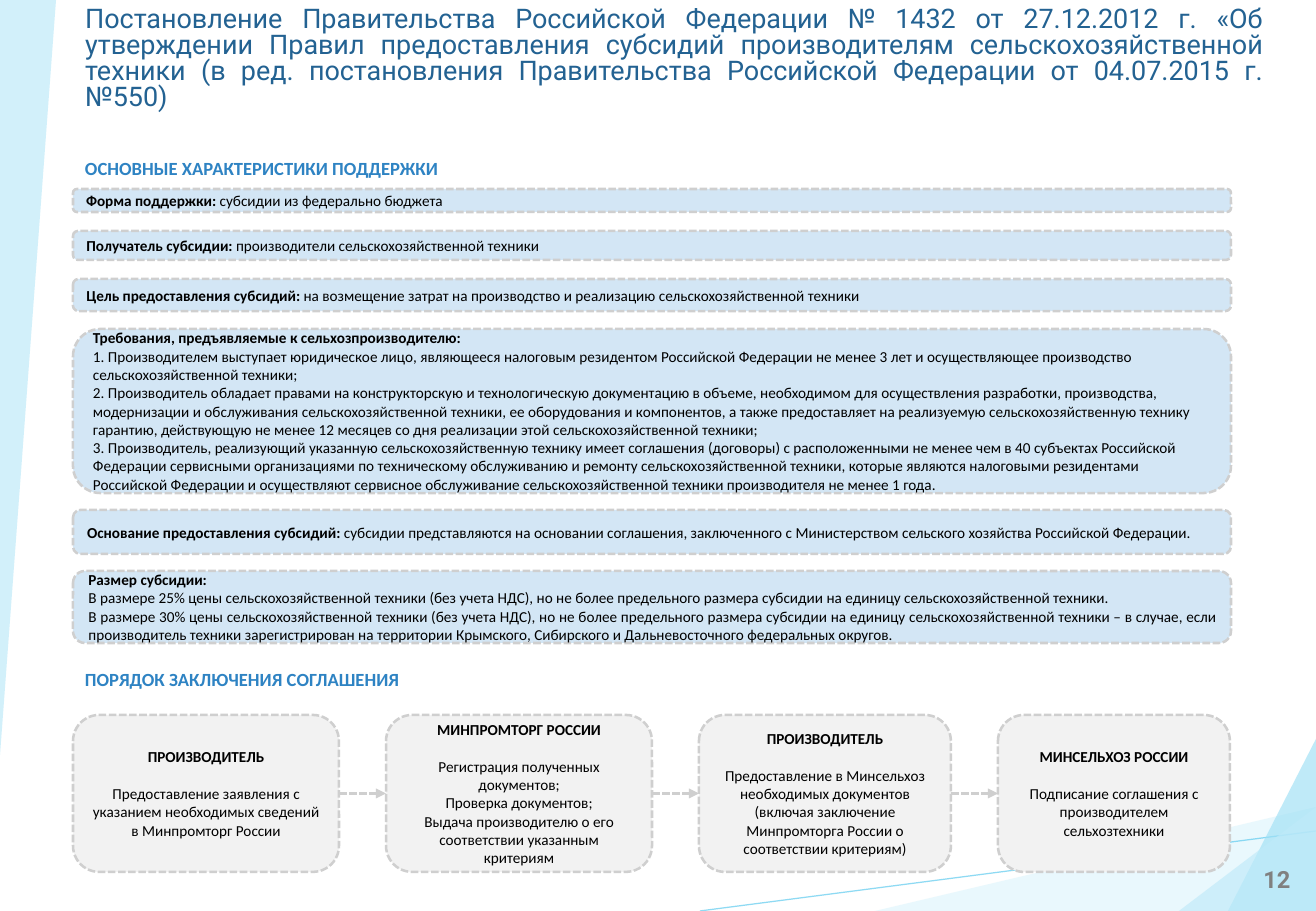
"""Build the slide on subsidies for makers of agricultural machinery."""
from itertools import pairwise

from lxml.etree import SubElement
from pptx import Presentation
from pptx.dml.color import RGBColor
from pptx.enum.dml import MSO_LINE
from pptx.enum.shapes import MSO_CONNECTOR, MSO_SHAPE
from pptx.enum.text import MSO_ANCHOR, MSO_AUTO_SIZE, PP_ALIGN
from pptx.oxml.ns import qn
from pptx.util import Pt

PX = 7526
SLIDE_SIZE = (1316, 911)
LEFT, WIDTH = 73, 1158
COLORS = {
    "title": "236292", "heading": "2E83C3", "text": "000000", "number": "808080",
    "row": "D3E6F5", "card": "F2F2F2", "border": "CFCFCF",
    "pale": "DFF5FC", "light": "BFEAF9", "sky": "9FE0F5", "ray": "5FCBEF",
}

TITLE = ("Постановление Правительства Российской Федерации № 1432 от 27.12.2012 г. "
         "«Об утверждении Правил предоставления субсидий производителям "
         "сельскохозяйственной техники (в ред. постановления Правительства "
         "Российской Федерации от 04.07.2015 г. №550)")
HEADINGS = [
    ("ОСНОВНЫЕ ХАРАКТЕРИСТИКИ ПОДДЕРЖКИ", 151),
    ("ПОРЯДОК ЗАКЛЮЧЕНИЯ СОГЛАШЕНИЯ", 662),
]
PAGE_NUMBER = "12"

ROWS = [
    (189, 23, PP_ALIGN.JUSTIFY,
     [[("Форма поддержки: ", True), ("субсидии из федерально бюджета", False)]]),
    (231, 29, PP_ALIGN.LEFT,
     [[("Получатель субсидии: ", True),
       ("производители сельскохозяйственной техники", False)]]),
    (279, 32, PP_ALIGN.JUSTIFY,
     [[("Цель предоставления субсидий: ", True),
       ("на возмещение затрат на производство и реализацию "
        "сельскохозяйственной техники", False)]]),
    (329, 164, PP_ALIGN.LEFT,
     [[("Требования, предъявляемые к сельхозпроизводителю:", True)],
      [("1. Производителем выступает юридическое лицо, являющееся налоговым "
        "резидентом Российской Федерации не менее 3 лет и осуществляющее "
        "производство сельскохозяйственной техники;", False)],
      [("2. Производитель обладает правами на конструкторскую и технологическую "
        "документацию в объеме, необходимом для осуществления разработки, "
        "производства, модернизации и обслуживания сельскохозяйственной техники, "
        "ее оборудования и компонентов, а также предоставляет на реализуемую "
        "сельскохозяйственную технику гарантию, действующую не менее 12 месяцев "
        "со дня реализации этой сельскохозяйственной техники;", False)],
      [("3. Производитель, реализующий указанную сельскохозяйственную технику "
        "имеет соглашения (договоры) с расположенными не менее чем в 40 субъектах "
        "Российской Федерации сервисными организациями по техническому "
        "обслуживанию и ремонту сельскохозяйственной техники, которые являются "
        "налоговыми резидентами Российской Федерации и осуществляют сервисное "
        "обслуживание сельскохозяйственной техники производителя не менее "
        "1 года.", False)]]),
    (510, 44, PP_ALIGN.JUSTIFY,
     [[("Основание предоставления субсидий: ", True),
       ("субсидии представляются на основании соглашения, заключенного с "
        "Министерством сельского хозяйства Российской Федерации.", False)]]),
    (571, 72, PP_ALIGN.JUSTIFY,
     [[("Размер субсидии:", True)],
      [("В размере 25% цены сельскохозяйственной техники (без учета НДС), но не "
        "более предельного размера субсидии на единицу сельскохозяйственной "
        "техники.", False)],
      [("В размере 30% цены сельскохозяйственной техники (без учета НДС), но не "
        "более предельного размера субсидии на единицу сельскохозяйственной "
        "техники – в случае, если производитель техники зарегистрирован на "
        "территории Крымского, Сибирского и Дальневосточного федеральных "
        "округов.", False)]]),
]

CARD_TOP, CARD_HEIGHT, CARD_GAP = 715, 157, 47
CARDS = [
    (266, "ПРОИЗВОДИТЕЛЬ",
     ["Предоставление заявления с указанием необходимых сведений в Минпромторг России"]),
    (266, "МИНПРОМТОРГ РОССИИ",
     ["Регистрация полученных документов;", "Проверка документов;",
      "Выдача производителю о его соответствии указанным критериям"]),
    (252, "ПРОИЗВОДИТЕЛЬ",
     ["Предоставление в Минсельхоз необходимых документов (включая заключение "
      "Минпромторга России о соответствии критериям)"]),
    (232, "МИНСЕЛЬХОЗ РОССИИ",
     ["Подписание соглашения с производителем сельхозтехники"]),
]

LEFT_WEDGE = [(0, 0), (56, 0), (0, 755)]
PALE_TRIANGLE = (875, 807, 441, 104)
RAY = (1316, 831, 700, 911)
CORNER_TRIANGLES = [("sky", (1228, 739, 88, 172)), ("light", (1179, 807, 137, 104))]


def emu(*lengths):
    return [length * PX for length in lengths]


def set_opacity(fill_or_line, percent):
    color = fill_or_line._xPr.find(qn("a:solidFill"))[0]
    SubElement(color, qn("a:alpha"), val=str(percent * 1000))


def paint(shape, color, opacity=None):
    shape.shadow.inherit = False
    shape.fill.solid()
    shape.fill.fore_color.rgb = RGBColor.from_string(COLORS[color])
    shape.line.fill.background()
    if opacity:
        set_opacity(shape.fill, opacity)


def dash(line):
    line.color.rgb = RGBColor.from_string(COLORS["border"])
    line.width = Pt(1.5)
    line.dash_style = MSO_LINE.SQUARE_DOT


def write(shape, paragraphs, size=9, font="Calibri", color="text", align=PP_ALIGN.LEFT,
          anchor=MSO_ANCHOR.MIDDLE, spacing=None, heading_gap=0):
    frame = shape.text_frame
    frame.word_wrap = True
    frame.auto_size = MSO_AUTO_SIZE.NONE
    frame.vertical_anchor = anchor
    for index, spans in enumerate(paragraphs):
        para = frame.add_paragraph() if index else frame.paragraphs[0]
        para.alignment = align
        if spacing:
            para.line_spacing = spacing
        if index == 1 and heading_gap:
            para.space_before = Pt(heading_gap)
        for text, bold in spans:
            span = para.add_run()
            span.text = text
            span.font.size = Pt(size)
            span.font.name = font
            span.font.bold = bold
            span.font.color.rgb = RGBColor.from_string(COLORS[color])


def add_triangle(page, color, place):
    triangle = page.shapes.add_shape(MSO_SHAPE.ISOSCELES_TRIANGLE, *emu(*place))
    triangle.adjustments[0] = 1
    paint(triangle, color, 66)


def add_line(page, ends):
    line = page.shapes.add_connector(MSO_CONNECTOR.STRAIGHT, *emu(*ends))
    SubElement(line._element.spPr, qn("a:effectLst"))
    return line


def add_backdrop(page):
    add_triangle(page, "pale", PALE_TRIANGLE)
    builder = page.shapes.build_freeform(*LEFT_WEDGE[0], scale=PX)
    builder.add_line_segments(LEFT_WEDGE[1:], close=True)
    paint(builder.convert_to_shape(), "light", 70)
    ray = add_line(page, RAY)
    ray.line.color.rgb = RGBColor.from_string(COLORS["ray"])
    ray.line.width = Pt(0.75)
    set_opacity(ray.line.fill, 70)
    for color, place in CORNER_TRIANGLES:
        add_triangle(page, color, place)


def add_box(page, place, color):
    box = page.shapes.add_shape(MSO_SHAPE.ROUNDED_RECTANGLE, *emu(*place))
    paint(box, color)
    dash(box.line)
    return box


def add_cards(page):
    boxes, left = [], LEFT
    for width, heading, lines in CARDS:
        box = add_box(page, (left, CARD_TOP, width, CARD_HEIGHT), "card")
        write(box, [[(heading, True)]] + [[(line, False)] for line in lines],
              align=PP_ALIGN.CENTER, heading_gap=11)
        boxes.append(box)
        left += width + CARD_GAP
    for source, target in pairwise(boxes):
        arrow = add_line(page, (0, 0, 0, 0))
        arrow.begin_connect(source, 3)
        arrow.end_connect(target, 1)
        dash(arrow.line)
        SubElement(arrow.line._ln, qn("a:tailEnd"), type="triangle")


def main():
    deck = Presentation()
    deck.slide_width, deck.slide_height = emu(*SLIDE_SIZE)
    page = deck.slides.add_slide(deck.slide_layouts[5])
    add_backdrop(page)
    title = page.shapes.title
    title.left, title.top, title.width, title.height = emu(LEFT, 2, 1203, 75)
    write(title, [[(TITLE, False)]], size=16, font="Roboto", color="title",
          align=PP_ALIGN.JUSTIFY, anchor=MSO_ANCHOR.TOP, spacing=0.8)
    number = page.shapes.add_textbox(*emu(1247, 859, 60, 41))
    write(number, [[(PAGE_NUMBER, True)]], size=14, font="Roboto", color="number",
          align=PP_ALIGN.CENTER, anchor=MSO_ANCHOR.TOP)
    for text, top in HEADINGS:
        heading = page.shapes.add_textbox(*emu(LEFT, top, WIDTH, 34))
        write(heading, [[(text, True)]], size=11, color="heading", anchor=MSO_ANCHOR.TOP)
    for top, height, align, paragraphs in ROWS:
        write(add_box(page, (LEFT, top, WIDTH, height), "row"), paragraphs, align=align)
    add_cards(page)
    deck.save("out.pptx")


if __name__ == "__main__":
    main()
